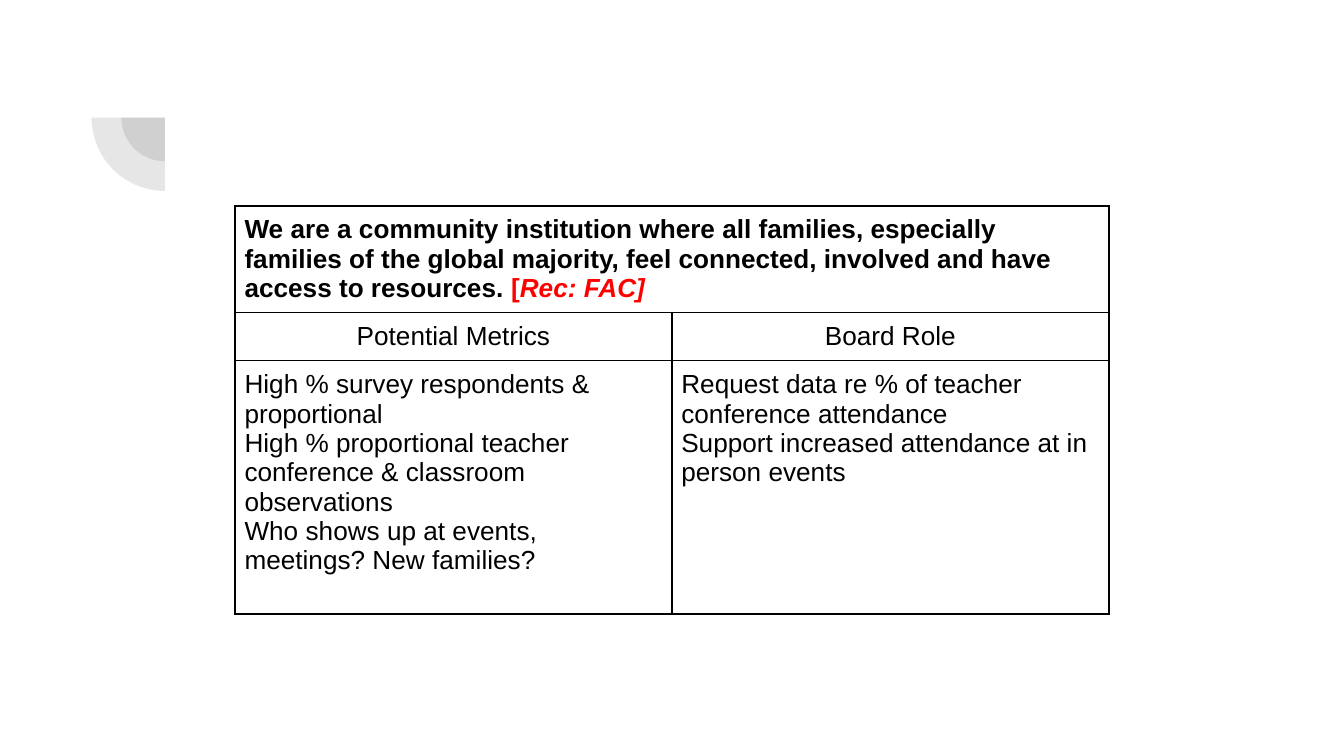
"""Build a slide with a goal table and a quarter-ring ornament."""
from lxml.etree import SubElement
from pptx import Presentation
from pptx.dml.color import RGBColor
from pptx.enum.shapes import MSO_SHAPE
from pptx.enum.text import PP_ALIGN
from pptx.oxml.ns import qn
from pptx.util import Pt

COLORS = {"text": "000000", "accent": "FF0000", "border": "000000", "ornament": "424242"}
GOAL = [
    ("We are a community institution where all families, especially families of the "
     "global majority, feel connected, involved and have access to resources. ", {"bold": True}),
    ("[", {"bold": True, "color": "accent"}),
    ("Rec: FAC]", {"bold": True, "italic": True, "color": "accent"}),
]
COLUMNS = [
    ("Potential Metrics", [
        "High % survey respondents & proportional",
        "High % proportional teacher conference & classroom observations",
        "Who shows up at events, meetings? New families?",
    ]),
    ("Board Role", [
        "Request data re % of teacher conference attendance",
        "Support increased attendance at in person events",
    ]),
]
ROW_HEIGHTS = [57.3, 25.7, 135.6]
TABLE_LEFT, TABLE_TOP, COLUMN_WIDTH, MARGIN = 126, 110.2, 234, 5
RING_CENTER = (88.4, 63)
RING_DIAMETERS = [46.8, 78.6]


def add_text(para, text, size=14, color="text", bold=False, italic=False, align=PP_ALIGN.LEFT):
    para.alignment = align
    span = para.add_run()
    span.text = text
    font = span.font
    font.name, font.size, font.bold, font.italic = "Arial", Pt(size), bold, italic
    font.color.rgb = RGBColor.from_string(COLORS[color])


def add_quarter(page, diameter):
    left, top = (Pt(center - diameter / 2) for center in RING_CENTER)
    quarter = page.shapes.add_shape(MSO_SHAPE.PIE, left, top, Pt(diameter), Pt(diameter))
    quarter.adjustments[0], quarter.adjustments[1] = 108, 162
    quarter.rotation = 270
    quarter.shadow.inherit = False
    quarter.line.fill.background()
    quarter.fill.solid()
    quarter.fill.fore_color.rgb = RGBColor.from_string(COLORS["ornament"])
    color = quarter.fill._xPr.find(qn("a:solidFill"))[0]
    SubElement(color, qn("a:alpha"), val="13000")


def format_cell(cell):
    cell.margin_left = cell.margin_right = cell.margin_top = cell.margin_bottom = Pt(MARGIN)
    properties = cell._tc.get_or_add_tcPr()
    for side in ("lnL", "lnR", "lnT", "lnB"):
        line = SubElement(properties, qn(f"a:{side}"), w=str(Pt(1)))
        fill = SubElement(line, qn("a:solidFill"))
        SubElement(fill, qn("a:srgbClr"), val=COLORS["border"])
    cell.fill.background()


def add_goal_table(page):
    table = page.shapes.add_table(
        len(ROW_HEIGHTS), len(COLUMNS), Pt(TABLE_LEFT), Pt(TABLE_TOP),
        Pt(COLUMN_WIDTH * len(COLUMNS)), Pt(sum(ROW_HEIGHTS))).table
    table.first_row = table.horz_banding = False
    for row, height in zip(table.rows, ROW_HEIGHTS):
        row.height = Pt(height)
    for cell in table.iter_cells():
        format_cell(cell)

    table.cell(0, 0).merge(table.cell(0, len(COLUMNS) - 1))
    for text, style in GOAL:
        add_text(table.cell(0, 0).text_frame.paragraphs[0], text, **style)
    for index, (heading, items) in enumerate(COLUMNS):
        table.columns[index].width = Pt(COLUMN_WIDTH)
        add_text(table.cell(1, index).text_frame.paragraphs[0], heading, align=PP_ALIGN.CENTER)
        frame = table.cell(2, index).text_frame
        for position, item in enumerate(items):
            add_text(frame.add_paragraph() if position else frame.paragraphs[0], item)


def main():
    deck = Presentation()
    deck.slide_width, deck.slide_height = Pt(720), Pt(405)
    page = deck.slides.add_slide(deck.slide_layouts[6])
    for diameter in RING_DIAMETERS:
        add_quarter(page, diameter)
    add_goal_table(page)
    deck.save("out.pptx")


if __name__ == "__main__":
    main()
